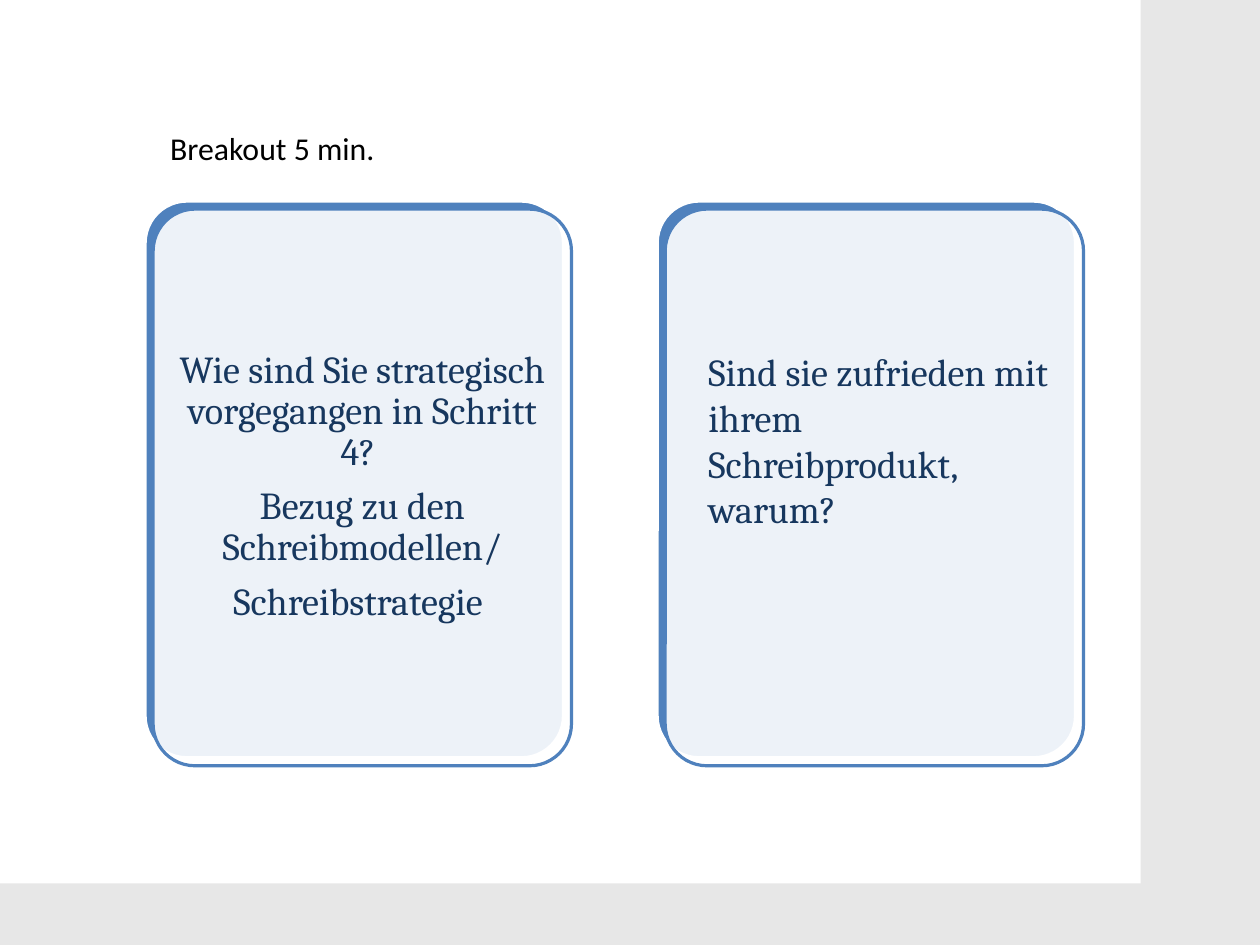
from lxml import etree
from pptx import Presentation
from pptx.dml.color import RGBColor
from pptx.enum.shapes import MSO_SHAPE
from pptx.enum.text import MSO_ANCHOR, MSO_AUTO_SIZE, PP_ALIGN
from pptx.oxml.ns import qn
from pptx.util import Inches, Pt

RECTANGLE, ROUNDED = MSO_SHAPE.RECTANGLE, MSO_SHAPE.ROUNDED_RECTANGLE
TOP, MIDDLE = MSO_ANCHOR.TOP, MSO_ANCHOR.MIDDLE
LEFT, CENTER = PP_ALIGN.LEFT, PP_ALIGN.CENTER
GROW, FIXED = MSO_AUTO_SIZE.SHAPE_TO_FIT_TEXT, MSO_AUTO_SIZE.NONE
BLUE, NAVY, WHITE = "4F81BD", "17375E", "FFFFFF"


def color(value):
    return RGBColor.from_string(value)


def add_text(place, lines, frame_format, paragraph_format, font_format, ink):
    box = page.shapes.add_textbox(*[Inches(length) for length in place])
    frame = box.text_frame
    for name, value in frame_format.items():
        setattr(frame, name, value)
    for index, line in enumerate(lines):
        para = frame.paragraphs[0] if index == 0 else frame.add_paragraph()
        for name, value in paragraph_format.items():
            setattr(para, name, value)
        span = para.add_run()
        span.text = line
        for name, value in font_format.items():
            setattr(span.font, name, value)
        span.font.color.rgb = color(ink)


# Page of 28 by 21 centimetres
deck = Presentation()
deck.slide_width, deck.slide_height = Inches(28 / 2.54), Inches(21 / 2.54)
page = deck.slides.add_slide(deck.slide_layouts[6])

# Grey surround with the white sheet
page.background.fill.solid()
page.background.fill.fore_color.rgb = color("E7E7E7")
sheet = page.shapes.add_shape(RECTANGLE, 0, 0, Inches(9.98), Inches(7.73))
sheet.shadow.inherit = False
sheet.fill.solid()
sheet.fill.fore_color.rgb = color(WHITE)
sheet.line.fill.background()

# Two cards, each a blue back with a translucent front shifted down and right
for card_left in (1.27, 5.75):
    for shift, fill, outline in ((0, BLUE, WHITE), (0.07, WHITE, BLUE)):
        card = page.shapes.add_shape(
            ROUNDED, Inches(card_left + shift), Inches(1.76 + shift),
            Inches(3.66), Inches(4.87))
        card.adjustments[0] = 0.1
        card.shadow.inherit = False
        card.fill.solid()
        card.fill.fore_color.rgb = color(fill)
        card.line.color.rgb = color(outline)
        card.line.width = Pt(2)
    # The front card, last in the pair, lets some blue through
    tint = card.fill._xPr.find(qn("a:solidFill"))[0]
    etree.SubElement(tint, qn("a:alpha"), val="90000")

# Questions on the cards
question_font = {"name": "Cambria", "size": Pt(24)}
margin = Inches(0.1)
add_text(
    (1.45, 1.93, 3.44, 4.66),
    ["Wie sind Sie strategisch vorgegangen in Schritt 4? ",
     "Bezug zu den Schreibmodellen/",
     "Schreibstrategie "],
    {"word_wrap": True, "auto_size": FIXED, "vertical_anchor": MIDDLE,
     "margin_left": margin, "margin_right": margin,
     "margin_top": margin, "margin_bottom": margin},
    {"alignment": CENTER, "line_spacing": 0.9, "space_after": Pt(8.4)},
    question_font, NAVY)
add_text(
    (6.1, 3, 3.2, 1.72),
    ["Sind sie zufrieden mit ihrem Schreibprodukt, warum?"],
    {"word_wrap": True, "auto_size": GROW, "vertical_anchor": TOP},
    {"alignment": LEFT}, question_font, NAVY)

# Breakout note
add_text(
    (1.39, 1.08, 2.01, 0.44), ["Breakout 5 min."],
    {"word_wrap": False, "auto_size": GROW, "vertical_anchor": TOP},
    {"alignment": LEFT}, {"name": "Calibri", "size": Pt(20)}, "000000")

deck.save("out.pptx")
